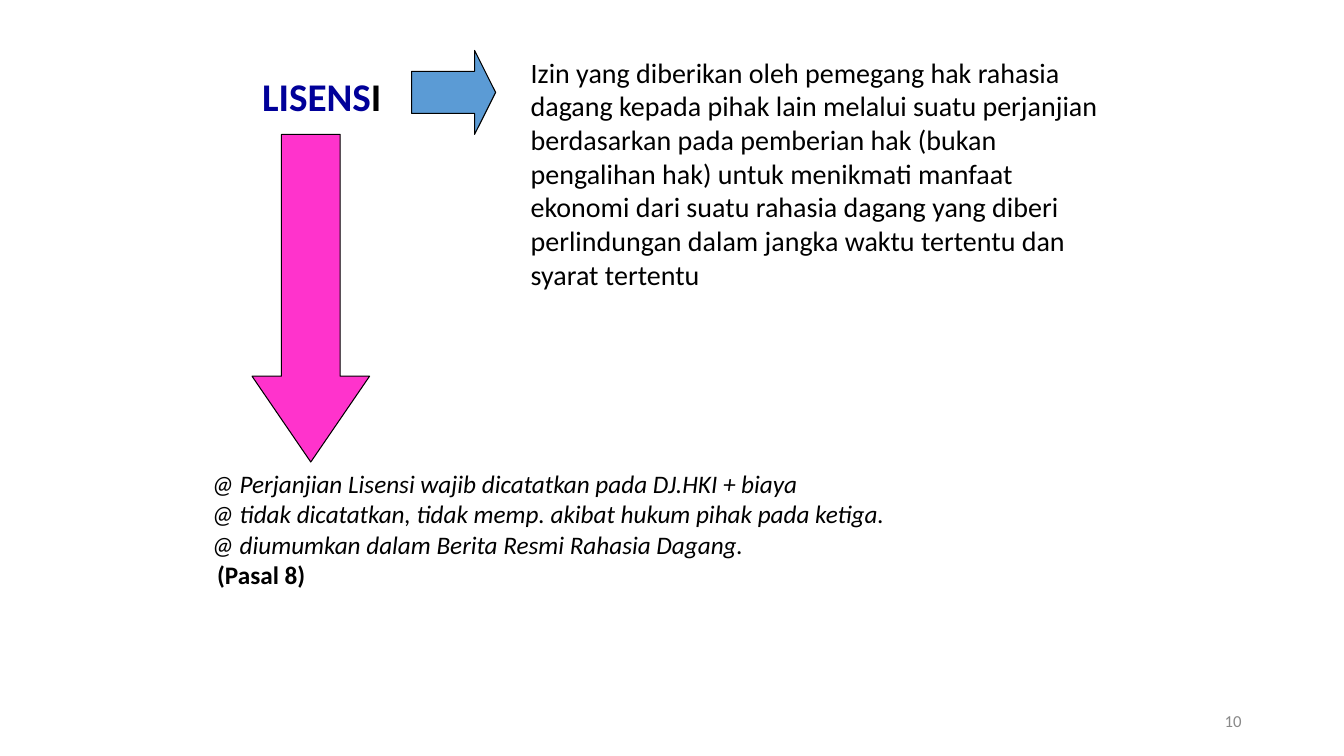
import pptx
import pptx.dml.color
import pptx.enum.shapes
import pptx.enum.text
import pptx.util

Pt = pptx.util.Pt
ALIGN = pptx.enum.text.PP_ALIGN
ANCHOR = pptx.enum.text.MSO_ANCHOR
SHAPE = pptx.enum.shapes.MSO_SHAPE

DEFINITION = (
    "Izin yang diberikan oleh pemegang hak rahasia dagang kepada pihak lain "
    "melalui suatu perjanjian berdasarkan pada pemberian hak (bukan pengalihan "
    "hak) untuk menikmati manfaat ekonomi dari suatu rahasia dagang yang diberi "
    "perlindungan dalam jangka waktu tertentu dan syarat tertentu"
)
RULES = [
    "@ Perjanjian Lisensi wajib dicatatkan pada DJ.HKI + biaya",
    "@ tidak dicatatkan, tidak memp. akibat hukum pihak pada ketiga.",
    "@ diumumkan dalam Berita Resmi Rahasia Dagang.",
]
ARTICLE = "(Pasal 8)"


def color(hex_code):
    return pptx.dml.color.RGBColor.from_string(hex_code)


def style(paragraph, size, hex_code="000000", bold=False, italic=False):
    font = paragraph.font
    font.name, font.size = "Calibri", Pt(size)
    font.bold, font.italic = bold, italic
    font.color.rgb = color(hex_code)


def add_frame(slide, left, top, width, height):
    frame = slide.shapes.add_textbox(Pt(left), Pt(top), Pt(width), Pt(height)).text_frame
    frame.word_wrap = True
    return frame


def add_arrow(slide, preset, left, top, width, height, head, fill):
    arrow = slide.shapes.add_shape(preset, Pt(left), Pt(top), Pt(width), Pt(height))
    arrow.adjustments[0], arrow.adjustments[1] = 0.5, head
    arrow.shadow.inherit = False
    arrow.fill.solid()
    arrow.fill.fore_color.rgb = color(fill)
    arrow.line.color.rgb = color("000000")
    arrow.line.width = Pt(0.75)


def add_heading(slide, left, top, width, height):
    heading = slide.shapes.title
    heading.left, heading.top = Pt(left), Pt(top)
    heading.width, heading.height = Pt(width), Pt(height)
    frame = heading.text_frame
    frame.word_wrap = False
    frame.auto_size = pptx.enum.text.MSO_AUTO_SIZE.NONE
    frame.vertical_anchor = ANCHOR.TOP
    term = frame.paragraphs[0]
    term.alignment = ALIGN.LEFT
    style(term, 28, "000099", bold=True)
    term.add_run().text = "LISENS"
    last_letter = term.add_run()
    last_letter.text = "I"
    last_letter.font.color.rgb = color("000000")


def add_definition(slide, left, top, width, height):
    definition = add_frame(slide, left, top, width, height).paragraphs[0]
    definition.text = DEFINITION
    style(definition, 20)


def add_rules(slide, left, top, width, height):
    frame = add_frame(slide, left, top, width, height)
    frame.text = "\n".join(RULES + [ARTICLE])
    *rules, article = frame.paragraphs
    for rule in rules:
        style(rule, 18, italic=True)
    # The article reference is set in slightly
    article._p.get_or_add_pPr().set("marL", str(Pt(4)))
    style(article, 18, bold=True)


def add_page_number(slide, left, top, width, height):
    frame = add_frame(slide, left, top, width, height)
    frame.vertical_anchor = ANCHOR.MIDDLE
    number = frame.paragraphs[0]
    number.text = "10"
    number.alignment = ALIGN.RIGHT
    style(number, 12, "898989")


def build_license_slide(slide, left, top, width, height):
    # Term, with an arrow to its definition
    add_heading(slide, left + 36, top + 12, 101, 41)
    add_arrow(slide, SHAPE.RIGHT_ARROW, left + 150, top, 60, 60, 0.25, "5B9BD5")
    add_definition(slide, left + 228, top, 432, 210)
    # Arrow down to the registration rules
    add_arrow(slide, SHAPE.DOWN_ARROW, left + 36, top + 60, 84, 234, 0.73, "FF33CC")
    add_rules(slide, left, top + 295, width, height - 295)


def main():
    deck = pptx.Presentation()
    deck.slide_width, deck.slide_height = Pt(960), Pt(540)
    slide = deck.slides.add_slide(deck.slide_layouts.get_by_name("Title Only"))
    build_license_slide(slide, 144, 36, 682, 412)
    add_page_number(slide, 678, 500.5, 216, 28.75)
    deck.save("out.pptx")


if __name__ == "__main__":
    main()
